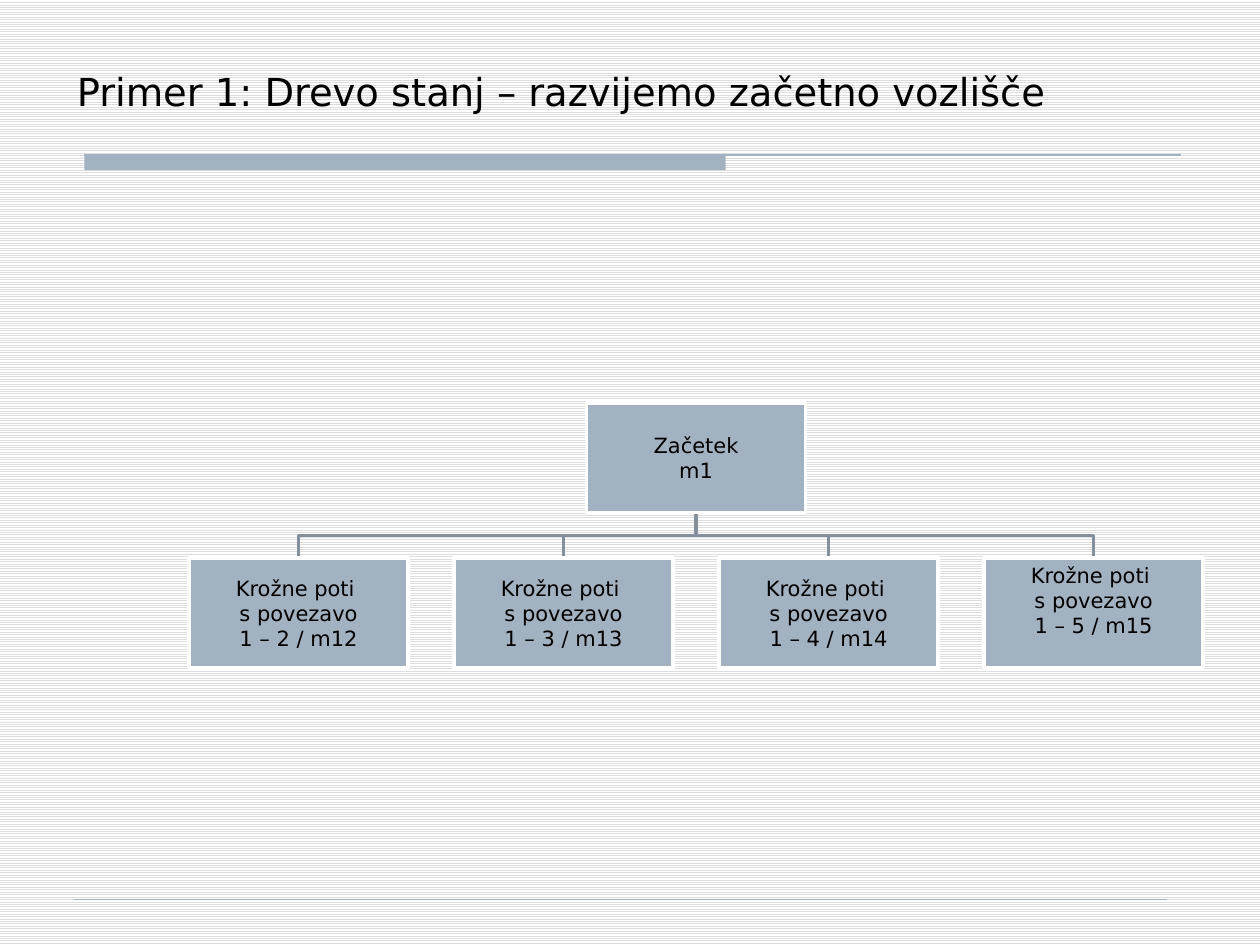
"""Build a slide with a state tree whose starting node has been expanded."""
from copy import deepcopy

from lxml import etree
from pptx import Presentation, util as u
from pptx.dml.color import RGBColor
from pptx.enum import dml, shapes, text
from pptx.oxml import ns

WHITE = RGBColor(0xFF, 0xFF, 0xFF)
BLACK = RGBColor(0, 0, 0)
STRIPE = RGBColor(0xDD, 0xDD, 0xDD)
STEEL = RGBColor(0xA3, 0xB2, 0xC1)
SLATE = RGBColor(0x83, 0x8F, 0x9B)

FONT = "DejaVu Sans"
WIDTH, HEIGHT = u.Inches(10), u.Inches(7.5)
LEFT, TOP = 1.5, 3.2
COLUMN, ROW = 6.31 / 3, 1.23
BOX_WIDTH, BOX_HEIGHT = 1.74, 0.87
ROOT_COLUMN = 1.5
INSET = 0.01


def write(frame, words, size, align, anchor, inset=None, bottom=None):
    """Fill a text frame with one formatted paragraph."""
    frame.word_wrap = True
    frame.auto_size = text.MSO_AUTO_SIZE.NONE
    frame.vertical_anchor = anchor
    if inset is not None:
        frame.margin_left = frame.margin_right = frame.margin_top = u.Inches(inset)
        frame.margin_bottom = u.Inches(inset if bottom is None else bottom)
    para = frame.paragraphs[0]
    para.text = words
    para.alignment = align
    for span in para.runs:
        span.font.size = u.Pt(size)
        span.font.name = FONT
        span.font.color.rgb = BLACK
    for line_break in para._p.findall(ns.qn("a:br")):
        line_break.append(deepcopy(para.runs[0]._r.rPr))


def add_box(holder, left, top, width, height, line=None):
    """Add a steel rectangle, outlined only when a line colour is given."""
    box = holder.add_shape(shapes.MSO_SHAPE.RECTANGLE, *map(u.Inches, (left, top, width, height)))
    box.shadow.inherit = False
    box.fill.solid()
    box.fill.fore_color.rgb = STEEL
    if line is None:
        box.line.fill.background()
    else:
        box.line.color.rgb = line
        box.line.width = u.Pt(2)
    return box


def add_rule(holder, left, right, top, weight):
    """Add a thin horizontal line."""
    ends = map(u.Inches, (left, top, right, top))
    rule = holder.add_connector(shapes.MSO_CONNECTOR.STRAIGHT, *ends)
    rule.line.color.rgb = STEEL
    rule.line.width = u.Pt(weight)
    etree.SubElement(rule._element.spPr, ns.qn("a:effectLst"))


def add_node(holder, column, row, words, bottom=INSET):
    """Add a labelled tree node at a grid position."""
    box = add_box(holder, LEFT + column * COLUMN, TOP + row * ROW, BOX_WIDTH, BOX_HEIGHT, WHITE)
    write(box.text_frame, words, 12, text.PP_ALIGN.CENTER, text.MSO_ANCHOR.MIDDLE, INSET, bottom)


def add_branch(holder, column):
    """Draw the bent branch from the root down to a child column."""
    start, end = (LEFT + BOX_WIDTH / 2 + place * COLUMN for place in (ROOT_COLUMN, column))
    top, bottom = TOP + BOX_HEIGHT, TOP + ROW
    middle = (top + bottom) / 2
    pen = holder.build_freeform(u.Inches(start), u.Inches(top))
    bends = [(start, middle), (end, middle), (end, bottom)]
    pen.add_line_segments([(u.Inches(x), u.Inches(y)) for x, y in bends], close=False)
    branch = pen.convert_to_shape()
    branch.shadow.inherit = False
    branch.fill.background()
    branch.line.color.rgb = SLATE
    branch.line.width = u.Pt(2)


def add_title(page, words):
    """Place and fill the title placeholder."""
    title = page.shapes.title
    title.left, title.top = u.Inches(0.51), u.Inches(0.21)
    title.width, title.height = u.Inches(8.75), u.Inches(0.75)
    write(title.text_frame, words, 22, text.PP_ALIGN.LEFT, text.MSO_ANCHOR.BOTTOM)


def set_background(page):
    """Give the page its striped background."""
    fill = page.background.fill
    fill.patterned()
    fill.pattern = dml.MSO_PATTERN.LIGHT_HORIZONTAL
    fill.fore_color.rgb = STRIPE
    fill.back_color.rgb = WHITE


def main():
    """Build and save the deck."""
    deck = Presentation()
    deck.slide_width, deck.slide_height = WIDTH, HEIGHT
    page = deck.slides.add_slide(deck.slide_layouts[5])
    set_background(page)
    add_box(page.shapes, 0.67, 1.23, 5.09, 0.12)
    add_rule(page.shapes, 0.67, 9.37, 1.23, 0.75)
    add_rule(page.shapes, 0.59, 9.26, 7.14, 0.25)
    add_title(page, "Primer 1: Drevo stanj – razvijemo začetno vozlišče")

    tree = page.shapes.add_group_shape().shapes
    for column in reversed(range(4)):
        add_branch(tree, column)
    add_node(tree, ROOT_COLUMN, 0, "Začetek\nm1")
    for column in range(4):
        target = column + 2
        words = f"Krožne poti \ns povezavo\n1 – {target} / m1{target}"
        add_node(tree, column, 1, words, bottom=0.21 if column == 3 else INSET)
    deck.save("out.pptx")


if __name__ == "__main__":
    main()
